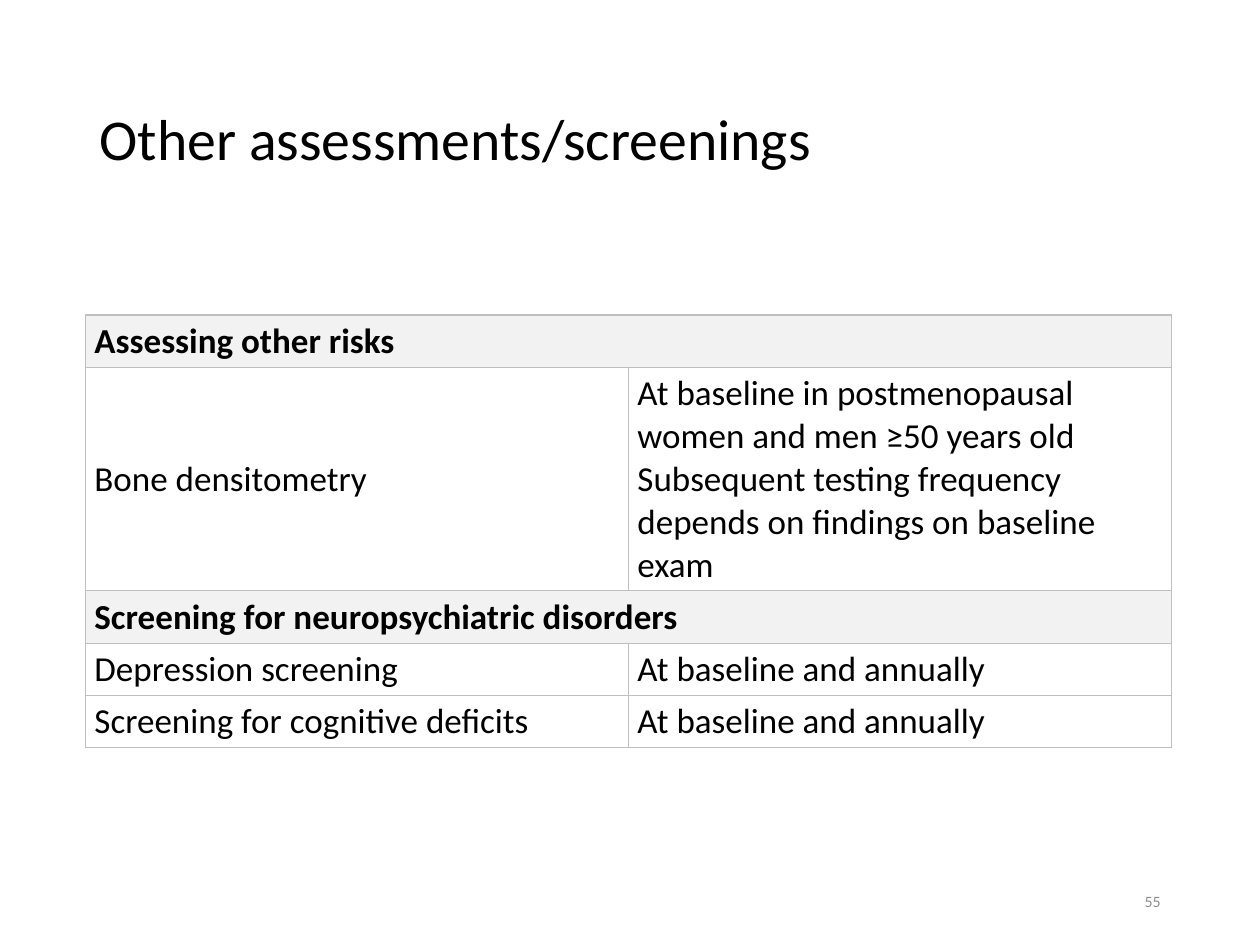
from dataclasses import dataclass

from lxml import etree
from pptx import Presentation
from pptx import util as u
from pptx.dml.color import RGBColor
from pptx.enum import text
from pptx.oxml import ns


@dataclass(frozen=True)
class Theme:
    font: str = "Calibri"
    ink: str = "000000"
    muted: str = "8C8C8C"
    band: str = "F2F2F2"
    plain: str = "FFFFFF"
    rule: str = "BFBFBF"
    weight: float = 0.75
    title: int = 33
    body: int = 20
    number: int = 9


class Deck:
    def __init__(self, theme):
        self.theme = theme
        self.file = Presentation()
        self.file.slide_width = u.Inches(10)
        self.file.slide_height = u.Inches(7.5)
        self.slide = self.file.slides.add_slide(self.file.slide_layouts[5])

    def label(self, frame, lines, size, color, bold=False, align=text.PP_ALIGN.LEFT):
        frame.text = "\n".join(lines)
        for para in frame.paragraphs:
            para.alignment = align
            para.font.name = self.theme.font
            para.font.size = u.Pt(size)
            para.font.bold = bold
            para.font.color.rgb = RGBColor.from_string(color)

    def title(self, words, box):
        shape = self.slide.shapes.title
        shape.left, shape.top, shape.width, shape.height = map(u.Inches, box)
        frame = shape.text_frame
        self.label(frame, [words], self.theme.title, self.theme.ink)
        frame.vertical_anchor = text.MSO_ANCHOR.MIDDLE
        frame.auto_size = text.MSO_AUTO_SIZE.NONE
        frame.paragraphs[0].line_spacing = 0.9

    def number(self, words, box):
        frame = self.slide.shapes.add_textbox(*map(u.Inches, box)).text_frame
        frame.word_wrap = True
        frame.vertical_anchor = text.MSO_ANCHOR.MIDDLE
        self.label(frame, [words], self.theme.number, self.theme.muted,
                   align=text.PP_ALIGN.RIGHT)

    def border(self, cell):
        props = cell._tc.get_or_add_tcPr()
        for side in ("lnL", "lnR", "lnT", "lnB"):
            line = etree.SubElement(props, ns.qn(f"a:{side}"), w=str(u.Pt(self.theme.weight)))
            fill = etree.SubElement(line, ns.qn("a:solidFill"))
            etree.SubElement(fill, ns.qn("a:srgbClr"), val=self.theme.rule)

    def style(self, cell, head):
        self.border(cell)
        cell.fill.solid()
        cell.fill.fore_color.rgb = RGBColor.from_string(
            self.theme.band if head else self.theme.plain)
        cell.margin_left = cell.margin_right = u.Inches(0.07)
        cell.margin_top = cell.margin_bottom = u.Inches(0.04 if head else 0.03)
        cell.vertical_anchor = text.MSO_ANCHOR.MIDDLE

    def table(self, rows, heights, box):
        grid = self.slide.shapes.add_table(len(rows), 2, *map(u.Inches, box)).table
        grid.first_row = grid.horz_banding = False
        for i, (row, height) in enumerate(zip(rows, heights)):
            grid.rows[i].height = u.Inches(height)
            head = len(row) == 1
            for j in range(2):
                self.style(grid.cell(i, j), head)
            if head:
                grid.cell(i, 0).merge(grid.cell(i, 1))
            for j, lines in enumerate(row):
                self.label(grid.cell(i, j).text_frame, lines,
                           self.theme.body, self.theme.ink, head)


def main():
    deck = Deck(Theme())
    deck.title("Other assessments/screenings", (0.69, 0.4, 8.62, 1.45))
    yearly = ["At baseline and annually"]
    rows = [
        [["Assessing other risks"]],
        [["Bone densitometry"],
         ["At baseline in postmenopausal women and men ≥50 years old",
          "Subsequent testing frequency depends on findings on baseline exam"]],
        [["Screening for neuropsychiatric disorders"]],
        [["Depression screening"], yearly],
        [["Screening for cognitive deficits"], yearly],
    ]
    heights = [0.41, 1.77, 0.41, 0.41, 0.41]
    deck.table(rows, heights, (0.68, 2.5, 8.62, sum(heights)))
    deck.number("55", (7.06, 6.95, 2.25, 0.4))
    deck.file.save("out.pptx")


if __name__ == "__main__":
    main()
